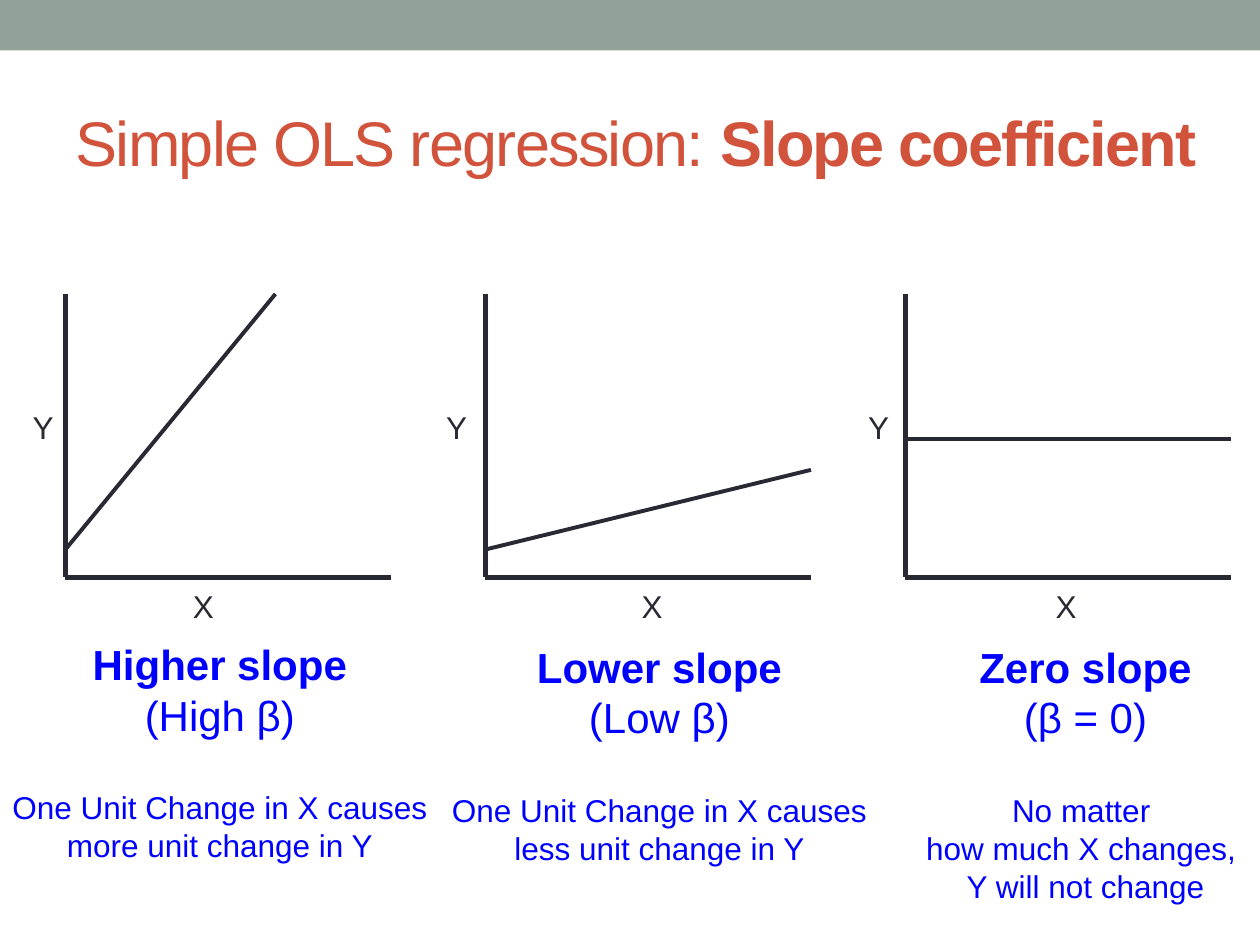
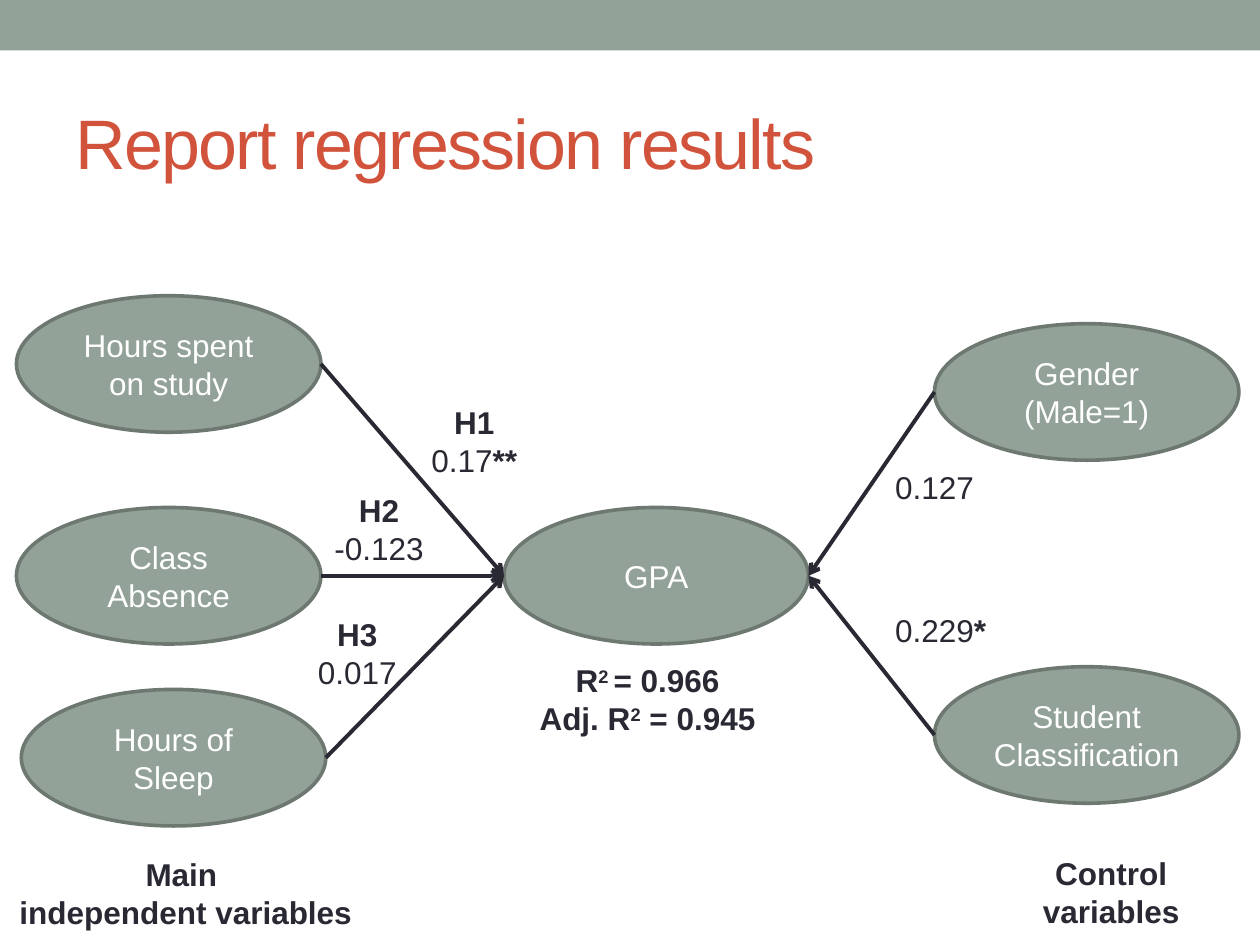
"""Build two slides on regression: slope coefficients and a results diagram."""
from lxml.etree import SubElement
from pptx import Presentation
from pptx.dml.color import RGBColor
from pptx.enum.shapes import MSO_CONNECTOR, MSO_SHAPE
from pptx.enum.text import MSO_ANCHOR, MSO_AUTO_SIZE, PP_ALIGN
from pptx.oxml.ns import qn
from pptx.util import Pt

FONT = "Arial"
SAGE, SAGE_DARK, RUST = "93A299", "6D7871", "D2533C"
INK, BLUE, WHITE = "292934", "0000FF", "FFFFFF"
PLAIN, BOLD, RAISED = "plain", "bold", "raised"


def write(shape, lines, colour, size=18, align=PP_ALIGN.CENTER):
    """Fill a shape with lines, each a list of (text, style) runs."""
    frame = shape.text_frame
    for number, runs in enumerate(lines):
        paragraph = frame.paragraphs[0] if number == 0 else frame.add_paragraph()
        paragraph.alignment = align
        paragraph.font.name = FONT
        paragraph.font.size = Pt(size)
        paragraph.font.color.rgb = RGBColor.from_string(colour)
        all_bold = all(style != PLAIN for _, style in runs)
        paragraph.font.bold = all_bold
        for text, style in runs:
            run = paragraph.add_run()
            run.text = text
            if style == BOLD and not all_bold:
                run.font.bold = True
            if style == RAISED:
                run.font._element.set("baseline", "30000")
    return frame


def draw_line(slide, start, end, width, arrow=False):
    """Draw a straight ink line between two points, without a shadow."""
    line = slide.shapes.add_connector(
        MSO_CONNECTOR.STRAIGHT, *[Pt(value) for value in (*start, *end)])
    line.line.color.rgb = RGBColor.from_string(INK)
    line.line.width = Pt(width)
    properties = line.element.spPr
    if arrow:
        SubElement(properties.find(qn("a:ln")), qn("a:tailEnd"), type="arrow")
    SubElement(properties, qn("a:effectLst"))


presentation = Presentation()
presentation.slide_width, presentation.slide_height = Pt(720), Pt(540)
layout = presentation.slide_layouts[5]
slope_slide = presentation.slides.add_slide(layout)
results_slide = presentation.slides.add_slide(layout)

band = slope_slide.shapes.add_shape(MSO_SHAPE.RECTANGLE, 0, 0, Pt(720), Pt(28.8))
band.shadow.inherit = False
band.fill.solid()
band.fill.fore_color.rgb = RGBColor.from_string(SAGE)
band.line.fill.background()
layout.shapes.element.insert(2, band.element)

for slide, width, size, runs in [
    (slope_slide, 667.5, 36,
     [("Simple OLS regression: ", PLAIN), ("Slope coefficient", BOLD)]),
    (results_slide, 648, 40, [("Report regression results", PLAIN)]),
]:
    title = slide.shapes.title
    title.left, title.top, title.width, title.height = Pt(36), Pt(42), Pt(width), Pt(78)
    heading = write(title, [runs], RUST, size, PP_ALIGN.LEFT)
    heading.auto_size = MSO_AUTO_SIZE.NONE
    heading.vertical_anchor = MSO_ANCHOR.MIDDLE
    for run in heading.paragraphs[0].runs:
        run.font._element.set("spc", "-100")

AXIS_TOP, AXIS_BOTTOM, AXIS_LENGTH = 168, 330, 186
slopes = [
    ("Higher slope", "(High β)",
     ["One Unit Change in X causes", "more unit change in Y"],
     (314, 120, 168), (103, 11.5), (-1.4, 361.4, 254)),
    ("Lower slope", "(Low β)",
     ["One Unit Change in X causes", "less unit change in Y"],
     (314, AXIS_LENGTH, 268.5), (359.5, 247.7), (249.8, 363, 254)),
    ("Zero slope", "(β = 0)",
     ["No matter ", "how much X changes, ", "Y will not change"],
     (251, AXIS_LENGTH, 251), (596, 488.9), (521.3, 363, 198)),
]
for index, (name, beta, notes, trend, letters, caption_place) in enumerate(slopes):
    origin = 37.4 + 240 * index
    corner = (origin, AXIS_BOTTOM)
    draw_line(slope_slide, (origin, AXIS_TOP), corner, 3)
    draw_line(slope_slide, corner, (origin + AXIS_LENGTH, AXIS_BOTTOM), 3)
    trend_start, trend_run, trend_end = trend
    draw_line(slope_slide, (origin, trend_start), (origin + trend_run, trend_end), 2.25)

    for letter, left, top in zip("XY", letters, (332, 229.7)):
        axis_label = slope_slide.shapes.add_textbox(Pt(left), Pt(top), Pt(26.4), Pt(29))
        write(axis_label, [[(letter, PLAIN)]], INK)

    left, top, width = caption_place
    caption = slope_slide.shapes.add_textbox(Pt(left), Pt(top), Pt(width), Pt(140))
    lines = [[(name, BOLD)], [(beta, PLAIN)]] + [[(note, PLAIN)] for note in notes]
    paragraphs = write(caption, lines, BLUE).paragraphs
    for paragraph in paragraphs[:2]:
        paragraph.font.size = Pt(24)
    paragraphs[2].space_before = Pt(28)

OVAL_WIDTH, OVAL_HEIGHT = 174, 78
GPA_LEFT, GPA_TOP = 288, 290
gpa_middle = GPA_TOP + OVAL_HEIGHT / 2
variables = [
    (GPA_LEFT, GPA_TOP, ["GPA"]),
    (9.4, 169, ["Hours spent on study"]),
    (9.4, GPA_TOP, ["Class", "Absence"]),
    (12.2, 394, ["Hours of Sleep"]),
    (534, 185, ["Gender", "(Male=1)"]),
    (534, 381, ["Student", "Classification"]),
]
for left, top, words in variables:
    oval = results_slide.shapes.add_shape(
        MSO_SHAPE.OVAL, Pt(left), Pt(top), Pt(OVAL_WIDTH), Pt(OVAL_HEIGHT))
    oval.shadow.inherit = False
    oval.fill.solid()
    oval.fill.fore_color.rgb = RGBColor.from_string(SAGE)
    oval.line.color.rgb = RGBColor.from_string(SAGE_DARK)
    oval.line.width = Pt(2.08)
    write(oval, [[(word, PLAIN)] for word in words], WHITE)

for left, top, _ in variables[1:]:
    middle = top + OVAL_HEIGHT / 2
    if left < GPA_LEFT:
        start, end = (left + OVAL_WIDTH, middle), (GPA_LEFT, gpa_middle)
    else:
        start, end = (left, middle), (GPA_LEFT + OVAL_WIDTH, gpa_middle)
    draw_line(results_slide, start, end, 2.25, arrow=True)

for left, top, width, lines in [
    (239, 226.8, 64, [[("H1", BOLD)], [("0.17", PLAIN), ("**", BOLD)]]),
    (183.6, 277.2, 66, [[("H2", BOLD)], [("-0.123", PLAIN)]]),
    (174.2, 347.8, 60, [[("H3", BOLD)], [("0.017", PLAIN)]]),
    (504, 264.2, 60, [[("0.127", PLAIN)]]),
    (504, 345.6, 67, [[("0.229", PLAIN), ("*", BOLD)]]),
    (2.9, 485.3, 206.6, [[("Main ", BOLD)], [("independent variables", BOLD)]]),
    (588.2, 484.6, 93.6, [[("Control", BOLD)], [("variables", BOLD)]]),
    (300.2, 374.4, 139.7, [
        [("R", BOLD), ("2 ", RAISED), ("= 0.966", BOLD)],
        [("Adj. R", BOLD), ("2", RAISED), (" = 0.945", BOLD)]]),
]:
    result = results_slide.shapes.add_textbox(
        Pt(left), Pt(top), Pt(width), Pt(7.5 + 21.8 * len(lines)))
    write(result, lines, INK)

presentation.save("out.pptx")
